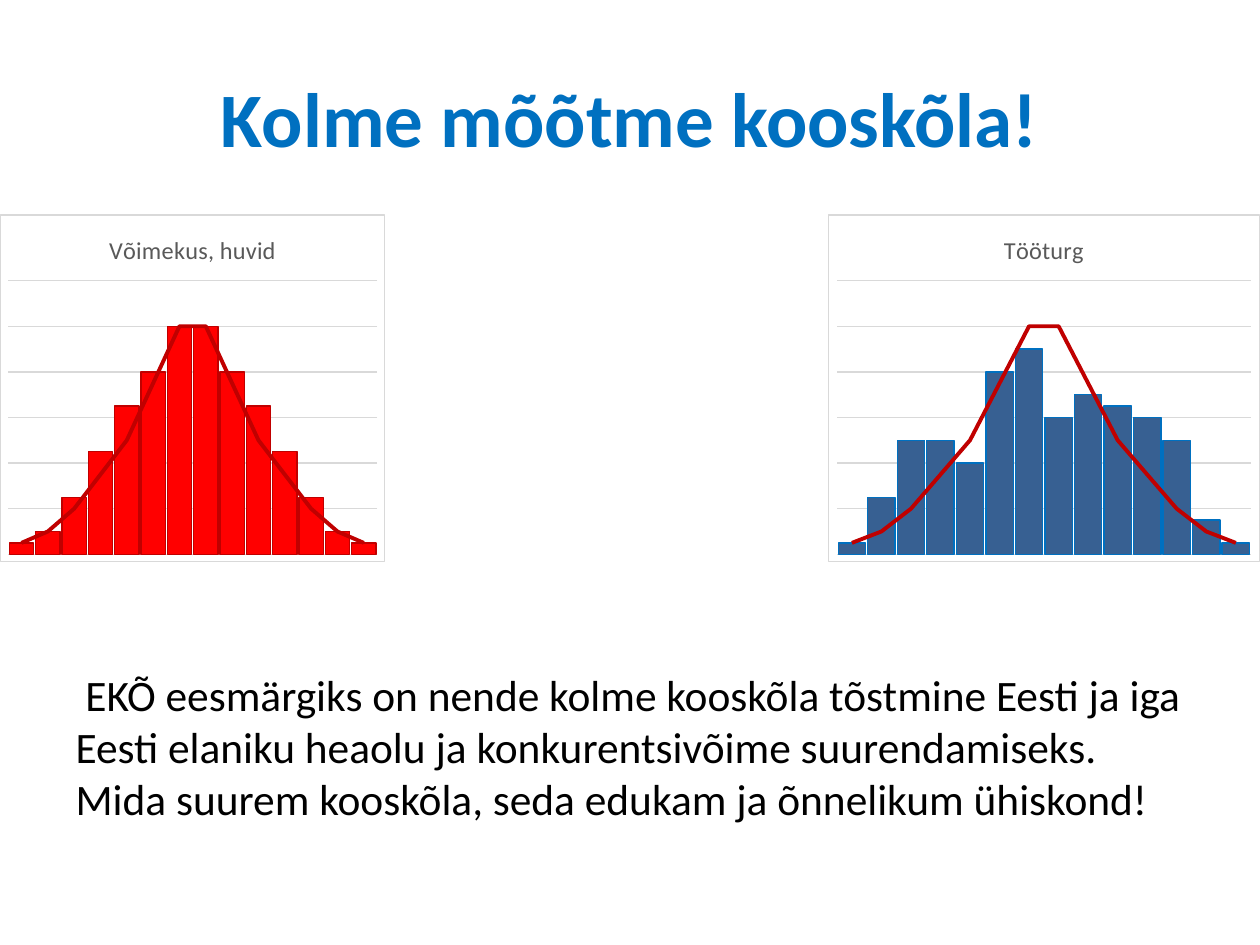
"""Build a slide comparing abilities with the labour market in two combined charts."""
from lxml import etree
from pptx import Presentation
from pptx.chart.data import CategoryChartData
from pptx.dml.color import RGBColor
from pptx.enum.chart import XL_CHART_TYPE
from pptx.enum.text import MSO_ANCHOR, MSO_AUTO_SIZE, PP_ALIGN
from pptx.oxml import parse_xml
from pptx.oxml.ns import qn
from pptx.util import Cm, Pt

COLUMNS = XL_CHART_TYPE.COLUMN_CLUSTERED
CENTER = PP_ALIGN.CENTER
MIDDLE, TOP = MSO_ANCHOR.MIDDLE, MSO_ANCHOR.TOP
NO_FIT = MSO_AUTO_SIZE.NONE

FONT = "Calibri"
CHART_NS = "http://schemas.openxmlformats.org/drawingml/2006/chart"
MAIN_NS = "http://schemas.openxmlformats.org/drawingml/2006/main"

TITLE = "Kolme mõõtme kooskõla!"
BODY = (" EKÕ eesmärgiks on nende kolme kooskõla tõstmine Eesti ja iga Eesti elaniku "
        "heaolu ja konkurentsivõime suurendamiseks. Mida suurem kooskõla, seda edukam "
        "ja õnnelikum ühiskond!")
CURVE = [5, 10, 20, 35, 50, 75, 100, 100, 75, 50, 35, 20, 10, 5]
CURVE_COLOR = "C00000"
CHART_TOP, CHART_HEIGHT = 4.32, 7.01
CHARTS = [
    {"title": "Tööturg", "left": 16.69, "width": 8.71, "fill": "376092", "line": "0070C0",
     "values": [5, 25, 50, 50, 40, 80, 90, 60, 70, 65, 60, 50, 15, 5]},
    {"title": "Võimekus, huvid", "left": 0, "width": 7.77, "fill": "FF0000", "line": "C00000",
     "values": [5, 10, 25, 45, 65, 80, 100, 100, 80, 65, 45, 25, 10, 5]},
]
PLOT_LAYOUT = {"layoutTarget": "inner", "xMode": "edge", "yMode": "edge",
               "x": 0.02, "y": 0.19, "w": 0.96, "h": 0.79}


def color(value):
    return RGBColor.from_string(value)


def style_line(line, value, width):
    line.color.rgb = color(value)
    line.width = Pt(width)


def style_font(font, size, value, bold=False):
    font.name, font.size, font.bold = FONT, Pt(size), bold
    font.color.rgb = color(value)


def fill_placeholder(box, text, place, size, value, anchor, bold=False):
    box.left, box.top, box.width, box.height = [Cm(length) for length in place]
    frame = box.text_frame
    frame.text = text
    frame.word_wrap = True
    frame.auto_size = NO_FIT
    frame.vertical_anchor = anchor
    para = frame.paragraphs[0]
    style_font(para.runs[0].font, size, value, bold)
    return para


def add_part(parent, tag, value):
    return etree.SubElement(parent, qn(f"c:{tag}"), val=str(value))


def move_to_line_plot(chart):
    """Turn the second column series into a line on the same axes."""
    bars = chart.element.find(f".//{qn('c:barChart')}")
    curve = bars.findall(qn("c:ser"))[1]
    for flag in curve.findall(qn("c:invertIfNegative")):
        curve.remove(flag)
    marker = parse_xml(f'<c:marker xmlns:c="{CHART_NS}"><c:symbol val="none"/></c:marker>')
    curve.find(qn("c:spPr")).addnext(marker)
    add_part(curve, "smooth", 0)
    lines = parse_xml(f'<c:lineChart xmlns:c="{CHART_NS}"><c:grouping val="standard"/>'
                      '<c:varyColors val="0"/></c:lineChart>')
    lines.append(curve)
    add_part(lines, "marker", 1)
    for axis in bars.findall(qn("c:axId")):
        add_part(lines, "axId", axis.get("val"))
    bars.addnext(lines)


def set_frame(chart):
    """Fix the plot area and give the chart a white ground and grey border."""
    space = chart.element
    area = space.find(f".//{qn('c:plotArea')}")
    for old in area.findall(qn("c:layout")):
        area.remove(old)
    parts = "".join(f'<c:{tag} val="{value}"/>' for tag, value in PLOT_LAYOUT.items())
    area.insert(0, parse_xml(f'<c:layout xmlns:c="{CHART_NS}"><c:manualLayout>{parts}'
                             '</c:manualLayout></c:layout>'))
    space.find(qn("c:chart")).addnext(parse_xml(
        f'<c:spPr xmlns:c="{CHART_NS}" xmlns:a="{MAIN_NS}">'
        '<a:solidFill><a:srgbClr val="FFFFFF"/></a:solidFill>'
        '<a:ln w="9525"><a:solidFill><a:srgbClr val="D9D9D9"/></a:solidFill></a:ln></c:spPr>'))


def add_combined_chart(page, item):
    data = CategoryChartData()
    data.categories = [str(number) for number in range(1, len(CURVE) + 1)]
    data.add_series("Series 1", item["values"])
    data.add_series("Series 2", CURVE)
    chart = page.shapes.add_chart(COLUMNS, Cm(item["left"]), Cm(CHART_TOP),
                                  Cm(item["width"]), Cm(CHART_HEIGHT), data).chart
    style_font(chart.font, 10, "000000")
    chart.has_legend = False
    chart.has_title = True
    frame = chart.chart_title.text_frame
    frame.text = item["title"]
    style_font(frame.paragraphs[0].runs[0].font, 14, "595959")

    value_axis = chart.value_axis
    value_axis.minimum_scale, value_axis.maximum_scale, value_axis.major_unit = 0, 120, 20
    value_axis.has_major_gridlines = True
    style_line(value_axis.major_gridlines.format.line, "D9D9D9", 0.75)
    value_axis.visible = chart.category_axis.visible = False

    plot = chart.plots[0]
    plot.gap_width = 8
    plot.vary_by_categories = False
    columns, curve = plot.series
    columns.invert_if_negative = False
    columns.format.fill.solid()
    columns.format.fill.fore_color.rgb = color(item["fill"])
    style_line(columns.format.line, item["line"], 0.75)
    style_line(curve.format.line, CURVE_COLOR, 2.25)
    move_to_line_plot(chart)
    set_frame(chart)


def main():
    deck = Presentation()
    deck.slide_width, deck.slide_height = Cm(25.4), Cm(19.05)
    page = deck.slides.add_slide(deck.slide_layouts[1])
    title, body = page.placeholders
    heading = fill_placeholder(title, TITLE, (1.27, 0.76, 22.86, 3.18), 44, "0070C0", MIDDLE, True)
    heading.alignment = CENTER
    para = fill_placeholder(body, BODY, (1.27, 13.34, 22.86, 3.68), 24.8, "000000", TOP)
    settings = para._p.get_or_add_pPr()
    settings.set("marL", "0")
    settings.set("indent", "0")
    etree.SubElement(settings, qn("a:buNone"))
    for item in CHARTS:
        add_combined_chart(page, item)
    deck.save("out.pptx")


if __name__ == "__main__":
    main()
